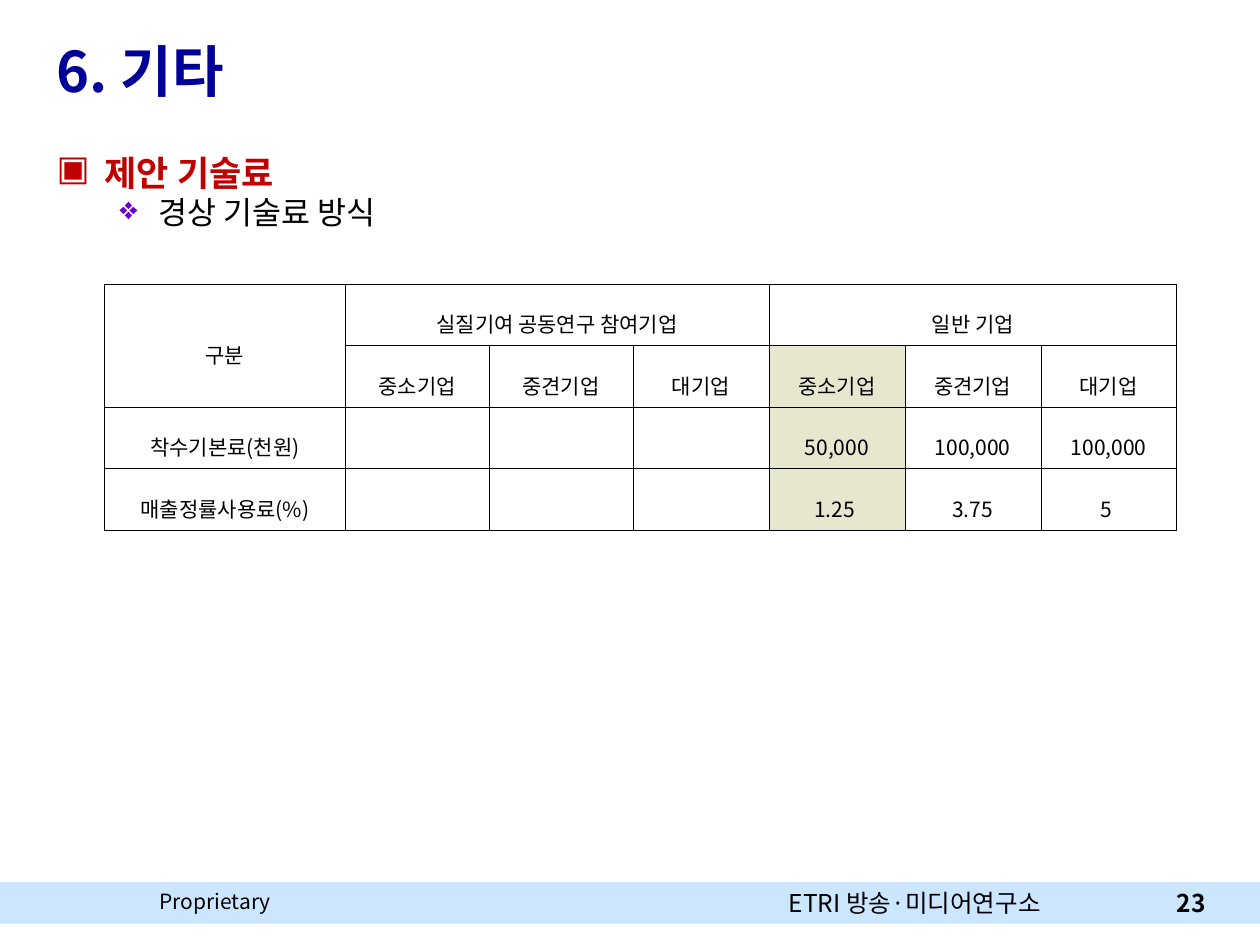
from dataclasses import dataclass

from lxml.etree import SubElement
from pptx import Presentation
from pptx.dml.color import RGBColor
from pptx.enum.shapes import MSO_SHAPE as Shape
from pptx.enum.text import MSO_ANCHOR as Anchor, PP_ALIGN as Align
from pptx.oxml.ns import qn
from pptx.util import Cm, Pt


@dataclass(frozen=True)
class Theme:
    font: str = "Noto Sans CJK KR"
    black: str = "000000"
    title: str = "000099"
    heading: str = "C00000"
    bullet: str = "6600CC"
    band: str = "CDE6FF"
    highlight: str = "E7E7CF"
    title_size: int = 32
    heading_size: int = 20
    body_size: int = 18
    footer_size: int = 14
    small_size: int = 12


theme = Theme()


def add_run(paragraph, text, size, color=theme.black, bold=False):
    run = paragraph.add_run()
    run.text = text
    run.font.size = Pt(size)
    run.font.bold = bold
    run.font.color.rgb = RGBColor.from_string(color)
    run.font.name = theme.font
    SubElement(run.font._element, qn("a:ea"), typeface=theme.font)


def add_text_box(left, top, width, height, anchor=Anchor.TOP, wrap=True):
    box = slide.shapes.add_textbox(Cm(left), Cm(top), Cm(width), Cm(height))
    box.text_frame.word_wrap = wrap
    box.text_frame.vertical_anchor = anchor
    return box.text_frame


presentation = Presentation()
presentation.slide_width, presentation.slide_height = Cm(25.4), Cm(19.05)
slide = presentation.slides.add_slide(presentation.slide_layouts[6])

# Footer band
band = slide.shapes.add_shape(Shape.RECTANGLE, 0, Cm(17.78), Cm(25.4), Cm(0.84))
band.shadow.inherit = False
band.fill.solid()
band.fill.fore_color.rgb = RGBColor.from_string(theme.band)
band.line.fill.background()

# Footer texts
notice = add_text_box(2.97, 17.78, 3.38, 0.76)
add_run(notice.paragraphs[0], "Proprietary", theme.small_size)
institute = add_text_box(15.65, 17.78, 6.71, 0.86)
add_run(institute.paragraphs[0], "ETRI 방송·미디어연구소", theme.footer_size)
page = add_text_box(23.34, 17.78, 1.22, 0.84, Anchor.MIDDLE, wrap=False)
page.paragraphs[0].alignment = Align.RIGHT
add_run(page.paragraphs[0], "23", theme.footer_size, bold=True)

# Title
title = add_text_box(0.89, 0.61, 21.59, 1.6, Anchor.MIDDLE)
add_run(title.paragraphs[0], "6. 기타", theme.title_size, theme.title, True)

# Bulleted headings: text, bullet, bullet colour, margin, hanging, size, colour, bold
headings = [
    ("제안 기술료", "▣", theme.heading, 0.97, 0.97, theme.heading_size, theme.heading, True),
    ("경상 기술료 방식", "❖", theme.bullet, 2.06, 0.79, theme.body_size, theme.black, False),
]
body = add_text_box(0.89, 2.92, 23.6, 2.21)
for level, (text, bullet, bullet_color, margin, hanging, size, color, bold) in enumerate(headings):
    paragraph = body.paragraphs[0] if level == 0 else body.add_paragraph()
    paragraph.level = level
    properties = paragraph._p.get_or_add_pPr()
    properties.set("marL", str(Cm(margin)))
    properties.set("indent", str(-Cm(hanging)))
    SubElement(SubElement(properties, qn("a:buClr")), qn("a:srgbClr"), val=bullet_color)
    SubElement(properties, qn("a:buChar"), char=bullet)
    add_run(paragraph, text, size, color, bold)

# Royalty table
sizes = ["중소기업", "중견기업", "대기업"]
rows = [
    ["구분", "실질기여 공동연구 참여기업", "", "", "일반 기업", "", ""],
    ["", *sizes, *sizes],
    ["착수기본료(천원)", "", "", "", "50,000", "100,000", "100,000"],
    ["매출정률사용료(%)", "", "", "", "1.25 ", "3.75", "5\u00a0"],
]
column_widths = [4.85, 2.9, 2.9] + [2.74] * 4
row_height = 1.24
highlight_column = 4
table = slide.shapes.add_table(
    len(rows), len(column_widths), Cm(2.11), Cm(5.72),
    Cm(sum(column_widths)), Cm(row_height * len(rows))).table
for column, width in zip(table.columns, column_widths):
    column.width = Cm(width)
for row in table.rows:
    row.height = Cm(row_height)

for row_index, texts in enumerate(rows):
    for column_index, text in enumerate(texts):
        cell = table.cell(row_index, column_index)
        cell.vertical_anchor = Anchor.MIDDLE
        cell.margin_left = cell.margin_right = Cm(0.05)
        cell.margin_top = cell.margin_bottom = Cm(0.05)
        # Borders come before the fill in the cell properties
        properties = cell._tc.get_or_add_tcPr()
        for side in ("lnL", "lnR", "lnT", "lnB"):
            line = SubElement(properties, qn(f"a:{side}"), w=str(Pt(0.25)))
            fill = SubElement(line, qn("a:solidFill"))
            SubElement(fill, qn("a:srgbClr"), val=theme.black)
        if row_index > 0 and column_index == highlight_column:
            cell.fill.solid()
            cell.fill.fore_color.rgb = RGBColor.from_string(theme.highlight)
        else:
            cell.fill.background()
        if text:
            paragraph = cell.text_frame.paragraphs[0]
            paragraph.alignment = Align.CENTER
            paragraph.line_spacing = 1.6
            add_run(paragraph, text, theme.small_size)

# Merged header cells
for first, last in [((0, 0), (1, 0)), ((0, 1), (0, 3)), ((0, 4), (0, 6))]:
    table.cell(*first).merge(table.cell(*last))

presentation.save("out.pptx")
